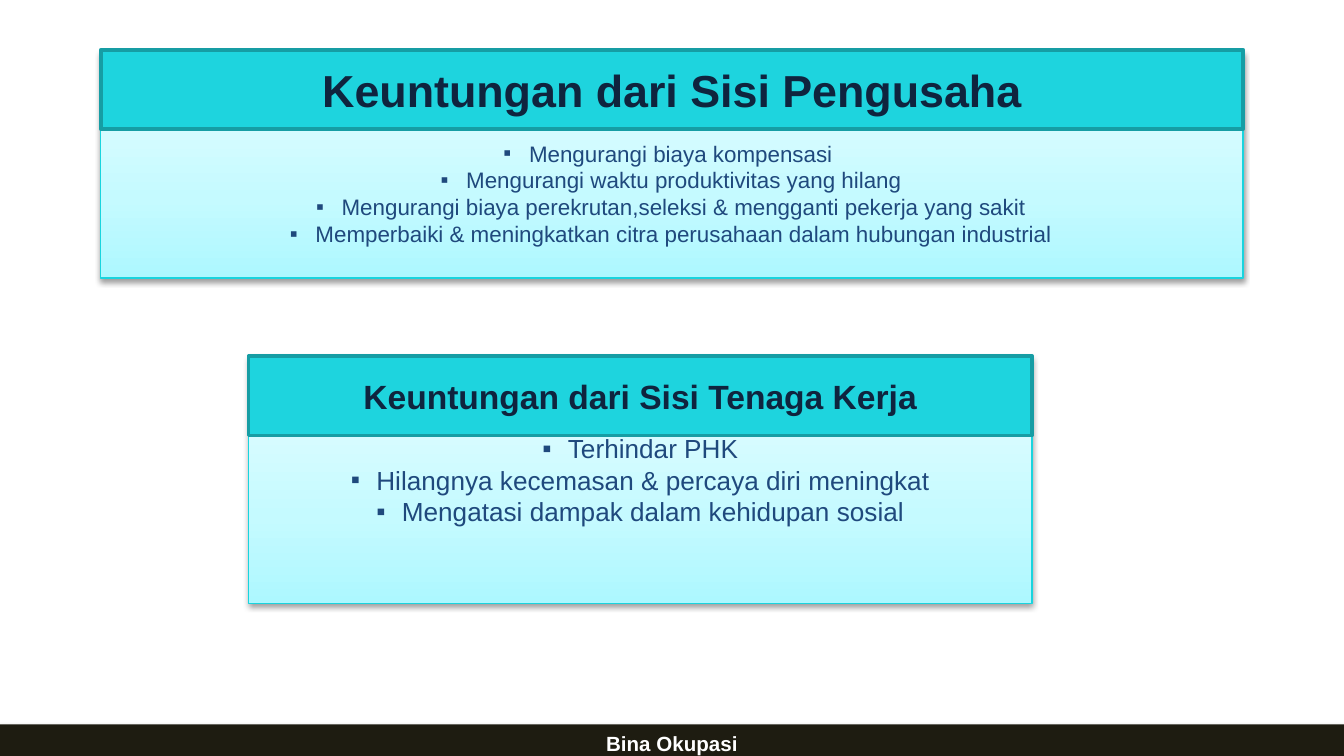
from copy import deepcopy

from lxml import etree
from pptx import Presentation
from pptx.dml.color import RGBColor
from pptx.enum.shapes import MSO_SHAPE
from pptx.enum.text import MSO_ANCHOR, PP_ALIGN
from pptx.oxml.ns import qn
from pptx.util import Inches, Pt

RECTANGLE = MSO_SHAPE.RECTANGLE
TOP, MIDDLE = MSO_ANCHOR.TOP, MSO_ANCHOR.MIDDLE
CENTER = PP_ALIGN.CENTER

HEADER_HEIGHT = 0.59
BULLET_INDENT = 0.19
BODY_GRADIENT = [(0, "ADF8FF"), (0.35, "C5FAFF"), (1, "E9FDFF")]


def color(hex_string):
    return RGBColor.from_string(hex_string)


class SlideBuilder:
    font_name = "Arial"
    header_fill, header_line = "1ED4DE", "169DA4"
    header_text, body_text = "0F243E", "1F497D"
    body_line = "19D4DE"
    footer_fill, footer_text = "1E1C11", "FFFFFF"

    def __init__(self, slide):
        self.slide = slide

    def rectangle(self, box, fill=None, line=None, line_width=0.75):
        shape = self.slide.shapes.add_shape(RECTANGLE, *map(Inches, box))
        shape.shadow.inherit = False
        if fill:
            shape.fill.solid()
            shape.fill.fore_color.rgb = color(fill)
        if line:
            shape.line.color.rgb = color(line)
            shape.line.width = Pt(line_width)
        else:
            shape.line.fill.background()
        return shape

    def gradient(self, shape, stops):
        shape.fill.gradient()
        shape.fill.gradient_angle = 90
        stop_list = shape._element.spPr.find(".//" + qn("a:gsLst"))
        stop_list.insert(1, deepcopy(stop_list[0]))
        for stop, (position, hex_string) in zip(shape.fill.gradient_stops, stops):
            stop.position = position
            stop.color.rgb = color(hex_string)

    def drop_shadow(self, shape, opacity, distance):
        effects = shape._element.spPr.find(qn("a:effectLst"))
        shadow = etree.SubElement(
            effects, qn("a:outerShdw"), blurRad=str(Pt(3.1)),
            dist=str(Pt(distance)), dir="5400000", rotWithShape="0")
        black = etree.SubElement(shadow, qn("a:srgbClr"), val="000000")
        etree.SubElement(black, qn("a:alpha"), val=str(opacity * 1000))

    def text(self, shape, lines, size, hex_string, bold=False, anchor=MIDDLE,
             bullet=None):
        frame = shape.text_frame
        frame.word_wrap = True
        frame.vertical_anchor = anchor
        for index, line in enumerate(lines):
            paragraph = frame.add_paragraph() if index else frame.paragraphs[0]
            paragraph.alignment = CENTER
            if bullet:
                self.bullet(paragraph, bullet)
            run = paragraph.add_run()
            run.text = line
            run.font.color.rgb = color(hex_string)
            style = {"name": self.font_name, "size": Pt(size), "bold": bold}
            for name, value in style.items():
                setattr(run.font, name, value)

    def bullet(self, paragraph, character):
        properties = paragraph._p.get_or_add_pPr()
        properties.set("marL", str(Inches(BULLET_INDENT)))
        properties.set("indent", str(-Inches(BULLET_INDENT)))
        etree.SubElement(properties, qn("a:buFont"), typeface=self.font_name)
        etree.SubElement(properties, qn("a:buChar"), char=character)

    def panel(self, box, heading, heading_size):
        """Add a shaded body with a heading bar on top; return the body."""
        body = self.rectangle(box, line=self.body_line)
        self.gradient(body, BODY_GRADIENT)
        self.drop_shadow(body, 38, 1.6)
        left, top, width, _ = box
        header = self.rectangle((left, top, width, HEADER_HEIGHT),
                                self.header_fill, self.header_line, 2)
        self.text(header, [heading], heading_size, self.header_text, bold=True)
        return body

    def bullets(self, shape, items, size, anchor=MIDDLE):
        self.text(shape, items, size, self.body_text, anchor=anchor, bullet="▪")

    def text_box(self, box):
        return self.slide.shapes.add_textbox(*map(Inches, box))

    def footer(self, box, caption):
        bar = self.rectangle(box, self.footer_fill)
        self.drop_shadow(bar, 35, 1.8)
        self.text(bar, [caption], 11, self.footer_text, bold=True, anchor=TOP)


def main():
    presentation = Presentation()
    presentation.slide_width = Inches(10)
    presentation.slide_height = presentation.slide_width * 9 // 16
    blank_layout = presentation.slide_layouts[6]
    builder = SlideBuilder(presentation.slides.add_slide(blank_layout))

    worker_panel = builder.panel((1.85, 2.65, 5.83, 1.84),
                                 "Keuntungan dari Sisi Tenaga Kerja", 18)
    builder.bullets(worker_panel, [
        "Terhindar PHK",
        "Hilangnya kecemasan & percaya diri meningkat",
        "Mengatasi dampak dalam kehidupan sosial",
    ], 14)

    builder.panel((0.75, 0.37, 8.5, 1.7), "Keuntungan dari Sisi Pengusaha", 24)
    employer_list = builder.text_box((0.98, 0.99, 8.03, 0.91))
    builder.bullets(employer_list, [
        "Mengurangi biaya kompensasi ",
        "Mengurangi waktu produktivitas yang hilang",
        "Mengurangi biaya perekrutan,seleksi & mengganti pekerja yang sakit",
        "Memperbaiki & meningkatkan citra perusahaan dalam hubungan industrial",
    ], 12, anchor=TOP)

    builder.footer((-0.02, 5.39, 10.04, 0.29), "Bina Okupasi")
    presentation.save("out.pptx")


if __name__ == "__main__":
    main()
